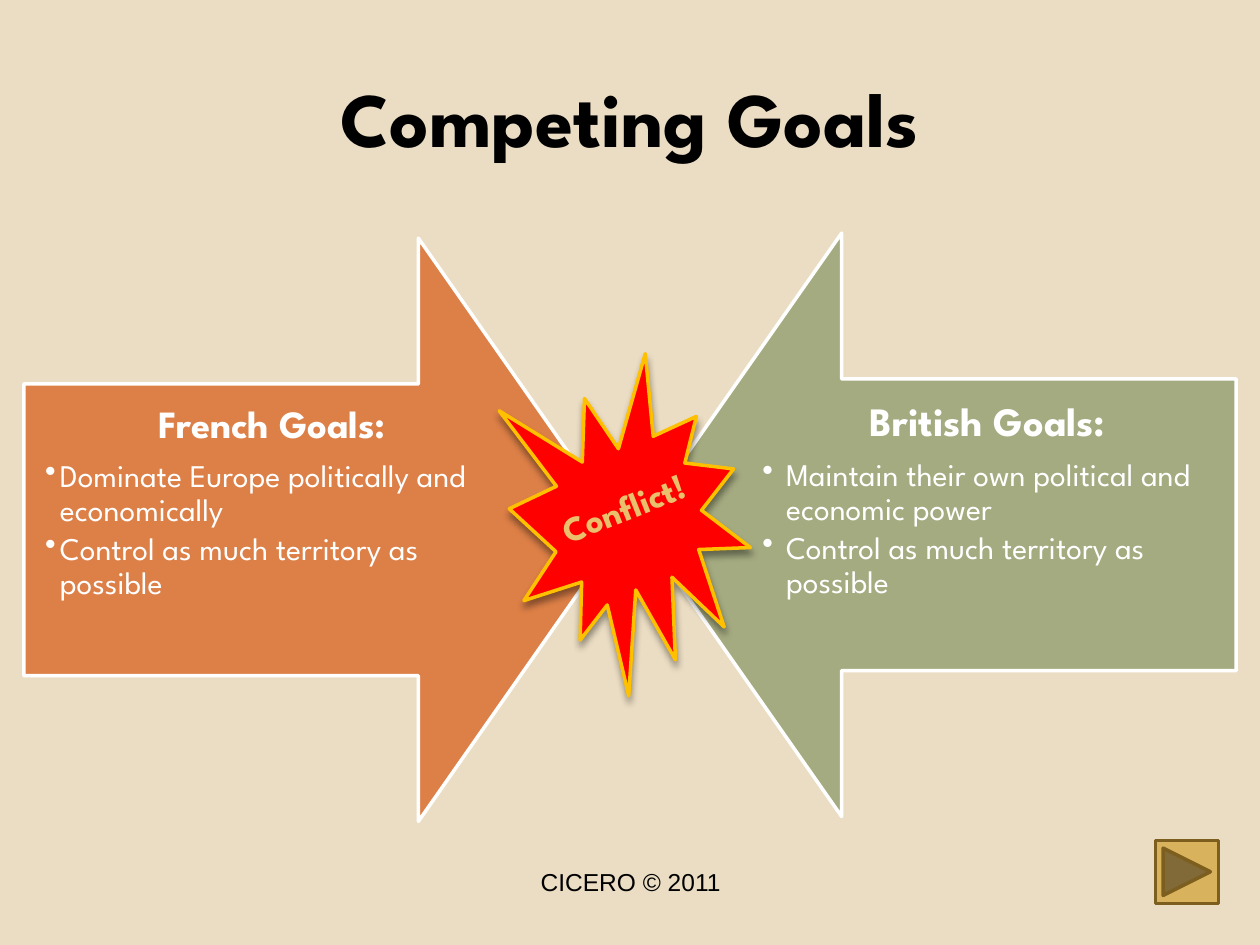
from lxml import etree
from pptx import Presentation
from pptx.dml.color import RGBColor
from pptx.enum.shapes import MSO_SHAPE
from pptx.enum.text import MSO_ANCHOR, MSO_AUTO_SIZE, PP_ALIGN
from pptx.oxml.ns import qn
from pptx.util import Cm, Pt

DOWN_ARROW = MSO_SHAPE.DOWN_ARROW
BURST = MSO_SHAPE.EXPLOSION1
NEXT_BUTTON = MSO_SHAPE.ACTION_BUTTON_FORWARD_OR_NEXT
CENTER, LEFT = PP_ALIGN.CENTER, PP_ALIGN.LEFT
MIDDLE = MSO_ANCHOR.MIDDLE
GROW = MSO_AUTO_SIZE.SHAPE_TO_FIT_TEXT
DISPLAY_FONT = "League Spartan"
GOLD_STOPS = [(0, "FFD48B"), (40, "EBC06C"), (50, "EBC06C"),
              (68, "EBC06C"), (100, "FFD48B")]


def color(hex_code):
    return RGBColor.from_string(hex_code)


def add_element(parent, tag, **attributes):
    element = etree.SubElement(parent, qn(tag))
    for name, value in attributes.items():
        element.set(name, str(value))
    return element


def write(para, text, size=18, font=DISPLAY_FONT, ink="000000", bold=False,
          align=CENTER, line_spacing=None, after=None, indent=None):
    """Fill one paragraph; an indent in cm makes it a bullet."""
    para.alignment = align
    if line_spacing:
        para.line_spacing = line_spacing
    if after is not None:
        para.space_before, para.space_after = Pt(0), Pt(after)
    if indent:
        para.level = 1
        properties = para._p.get_or_add_pPr()
        properties.set("marL", str(Cm(indent)))
        properties.set("indent", str(-Cm(indent)))
        add_element(properties, "a:buChar", char="•")
    span = para.add_run()
    span.text = text
    span.font.name, span.font.size, span.font.bold = font, Pt(size), bold
    span.font.color.rgb = color(ink)
    return span


def add_text_box(page, box, inset=None):
    text_box = page.shapes.add_textbox(*map(Cm, box))
    frame = text_box.text_frame
    frame.word_wrap = True
    if inset:
        frame.margin_left = frame.margin_right = Cm(inset)
        frame.margin_top = frame.margin_bottom = Cm(inset)
    return text_box


def add_filled_shape(page, kind, box, fill, line):
    shape = page.shapes.add_shape(kind, *map(Cm, box))
    shape.shadow.inherit = False
    shape.fill.solid()
    shape.fill.fore_color.rgb = color(fill)
    shape.line.color.rgb = color(line)
    shape.line.width = Pt(2)
    return shape


def add_title(page, box, text):
    title = page.shapes.title
    title.left, title.top, title.width, title.height = map(Cm, box)
    title.text_frame.vertical_anchor = MIDDLE
    write(title.text_frame.paragraphs[0], text, size=44, bold=True)


def add_goal_arrow(page, box, fill, heading, goals, points_right,
                   heading_size, inset, indent):
    """Block arrow filling the box, with its goals on the shaft."""
    left, top, width, height = box
    # The down arrow is turned sideways about its centre
    shift = (width - height) / 2
    arrow = add_filled_shape(page, DOWN_ARROW,
                             (left + shift, top - shift, height, width), fill, "FFFFFF")
    arrow.adjustments[0], arrow.adjustments[1] = 0.5, 0.35
    arrow.rotation = 270 if points_right else 90

    # Text covers the shaft and half of the head
    half_head = 0.35 * height / 2
    text_left = left if points_right else left + half_head
    text_box = add_text_box(
        page, (text_left, top + height / 4, width - half_head, height / 2), inset)
    frame = text_box.text_frame
    write(frame.paragraphs[0], heading, size=heading_size, ink="FFFFFF", bold=True,
          line_spacing=0.9, after=0.35 * heading_size)
    for goal in goals:
        write(frame.add_paragraph(), goal, ink="FFFFFF", align=LEFT,
              line_spacing=0.9, after=2.7, indent=indent)


def add_conflict_burst(page, box, text):
    left, top, width, height = box
    burst = add_filled_shape(page, BURST, box, "FF0000", "FFC000")
    burst.rotation = 351.8
    shadow = add_element(burst._element.spPr.find(qn("a:effectLst")), "a:outerShdw",
                         blurRad=Pt(4), dist=Pt(3), dir=90 * 60000, rotWithShape=0)
    shade = add_element(shadow, "a:srgbClr", val="000000")
    add_element(shade, "a:alpha", val=40000)

    # Tilted label with a gold gradient
    label = add_text_box(page, (left + 0.53, top + 2.47, 3.4, 1.12))
    label.rotation = 338.4
    label.text_frame.word_wrap = False
    label.text_frame.auto_size = GROW
    span = write(label.text_frame.paragraphs[0], text, size=20, bold=True)
    span.font.fill.gradient()
    span.font.fill.gradient_angle = 270
    stops = span._r.rPr.find(qn("a:gradFill")).find(qn("a:gsLst"))
    for stop in list(stops):
        stops.remove(stop)
    for position, hex_code in GOLD_STOPS:
        stop = add_element(stops, "a:gs", pos=position * 1000)
        add_element(stop, "a:srgbClr", val=hex_code)


def main():
    deck = Presentation()
    deck.slide_width, deck.slide_height = Cm(25.4), Cm(19.05)
    page = deck.slides.add_slide(deck.slide_layouts[5])
    page.background.fill.solid()
    page.background.fill.fore_color.rgb = color("EBDDC3")

    add_title(page, (1.27, 0.76, 22.86, 3.18), "Competing Goals")

    # Opposing arrows
    shared_goal = "Control as much territory as possible"
    add_goal_arrow(page, (0.48, 4.8, 12.07, 11.76), "DD8047", "French Goals:",
                   ["Dominate Europe politically and economically", shared_goal],
                   points_right=True, heading_size=22, inset=0.43, indent=0.3)
    add_goal_arrow(page, (12.85, 4.7, 12.07, 11.76), "A5AB81", "British Goals:",
                   ["Maintain their own political and economic power", shared_goal],
                   points_right=False, heading_size=23, inset=0.46, indent=0.48)

    # Footer, burst and navigation button
    footer = add_text_box(page, (8.69, 17.35, 8.05, 1.32))
    write(footer.text_frame.paragraphs[0], "CICERO © 2011", size=14, font="Arial")
    add_conflict_burst(page, (10.34, 7.21, 4.7, 6.78), "Conflict!")
    add_filled_shape(page, NEXT_BUTTON, (23.29, 16.94, 1.27, 1.27), "D8B25C", "7C5F1E")

    deck.save("out.pptx")


if __name__ == "__main__":
    main()
